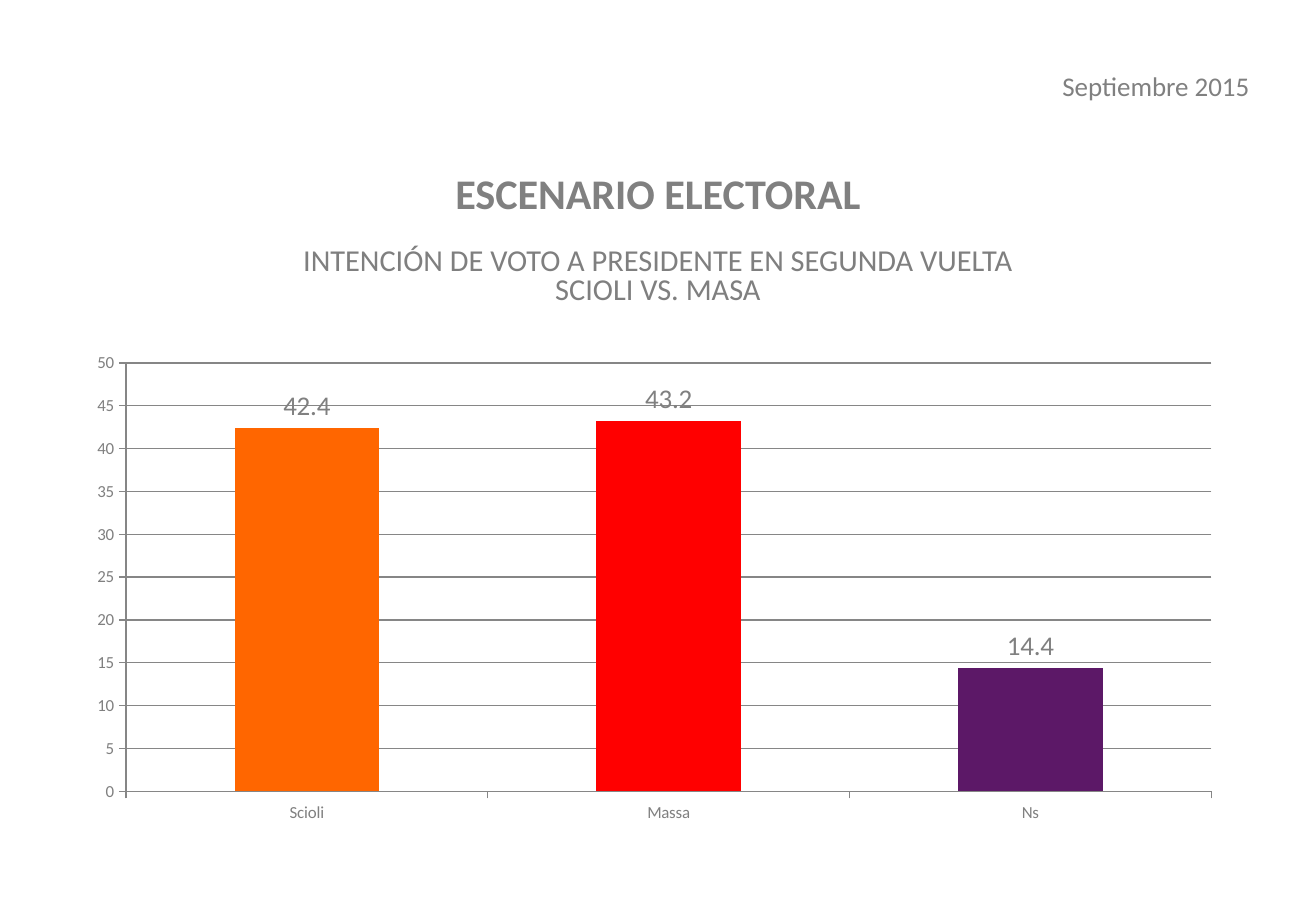
"""Build a slide with a column chart of second-round voting intention."""
import pptx
import pptx.chart.data
import pptx.dml.color
import pptx.enum.chart
import pptx.enum.text
import pptx.util
from pptx.util import Inches

FONT = "Calibri"
GRAY = "808080"
LINE_GRAY = "868686"
DATE = "Septiembre 2015"
HEADING = [
    ("ESCENARIO ELECTORAL", 25, True, GRAY, 0),
    ("INTENCIÓN DE VOTO A PRESIDENTE EN SEGUNDA VUELTA", 18, False, "7F7F7F", 18),
    ("SCIOLI VS. MASA", 18, False, "7F7F7F", 0),
]
RESULTS = [
    ("Scioli", 42.4, "FF6600"),
    ("Massa", 43.2, "FF0000"),
    ("Ns", 14.4, "5C1867"),
]


def rgb(value):
    """Turn a hex string into a colour."""
    return pptx.dml.color.RGBColor.from_string(value)


def style_font(font, size, color=GRAY, bold=False):
    """Set the typeface, size, weight and colour of a font."""
    font.name = FONT
    font.size = pptx.util.Pt(size)
    font.bold = bold
    font.color.rgb = rgb(color)


def style_line(line):
    """Give a chart line its colour and width."""
    line.color.rgb = rgb(LINE_GRAY)
    line.width = pptx.util.Pt(0.75)


def add_heading(slide):
    """Fill the title placeholder with the heading lines."""
    title = slide.shapes.title
    title.left, title.top = Inches(0), Inches(1.46)
    title.width, title.height = Inches(10.83), Inches(1.3)
    frame = title.text_frame
    frame.word_wrap = True
    frame.auto_size = pptx.enum.text.MSO_AUTO_SIZE.NONE
    frame.vertical_anchor = pptx.enum.text.MSO_ANCHOR.TOP
    frame.margin_top = frame.margin_bottom = 0
    frame.text = "\n".join(line[0] for line in HEADING)
    for paragraph, (_, size, bold, color, space) in zip(frame.paragraphs, HEADING):
        paragraph.alignment = pptx.enum.text.PP_ALIGN.CENTER
        paragraph.line_spacing = 0.8
        paragraph.space_before = pptx.util.Pt(space)
        style_font(paragraph.font, size, color, bold)


def add_date(slide):
    """Add the date at the upper right."""
    box = slide.shapes.add_textbox(Inches(8.57), Inches(0.52), Inches(1.81), Inches(0.37))
    box.text_frame.word_wrap = True
    paragraph = box.text_frame.paragraphs[0]
    paragraph.text = DATE
    paragraph.alignment = pptx.enum.text.PP_ALIGN.RIGHT
    style_font(paragraph.font, 16)


def add_results_chart(slide):
    """Add the column chart with one colour for each candidate."""
    data = pptx.chart.data.CategoryChartData()
    data.categories = [name for name, _, _ in RESULTS]
    data.add_series("Series 1", [value for _, value, _ in RESULTS])
    chart = slide.shapes.add_chart(
        pptx.enum.chart.XL_CHART_TYPE.COLUMN_CLUSTERED,
        Inches(0.61), Inches(2.83), Inches(9.55), Inches(4.02), data,
    ).chart
    chart.has_title = False
    chart.has_legend = False
    style_font(chart.font, 10)

    plot = chart.plots[0]
    plot.gap_width = 150
    plot.vary_by_categories = False
    series = plot.series[0]
    for index, (_, _, color) in enumerate(RESULTS):
        fill = series.points[index].format.fill
        fill.solid()
        fill.fore_color.rgb = rgb(color)

    labels = series.data_labels
    labels.show_value = True
    labels.position = pptx.enum.chart.XL_LABEL_POSITION.OUTSIDE_END
    style_font(labels.font, 16)

    for axis in (chart.category_axis, chart.value_axis):
        axis.major_tick_mark = pptx.enum.chart.XL_TICK_MARK.OUTSIDE
        style_line(axis.format.line)
    value_axis = chart.value_axis
    value_axis.minimum_scale, value_axis.maximum_scale = 0, 50
    value_axis.major_unit = 5
    value_axis.has_major_gridlines = True
    style_line(value_axis.major_gridlines.format.line)


def main():
    """Create the presentation and save it."""
    presentation = pptx.Presentation()
    presentation.slide_width = Inches(10.83)
    presentation.slide_height = Inches(7.5)
    slide = presentation.slides.add_slide(presentation.slide_layouts[5])
    add_results_chart(slide)
    add_heading(slide)
    add_date(slide)
    presentation.save("out.pptx")


if __name__ == "__main__":
    main()
